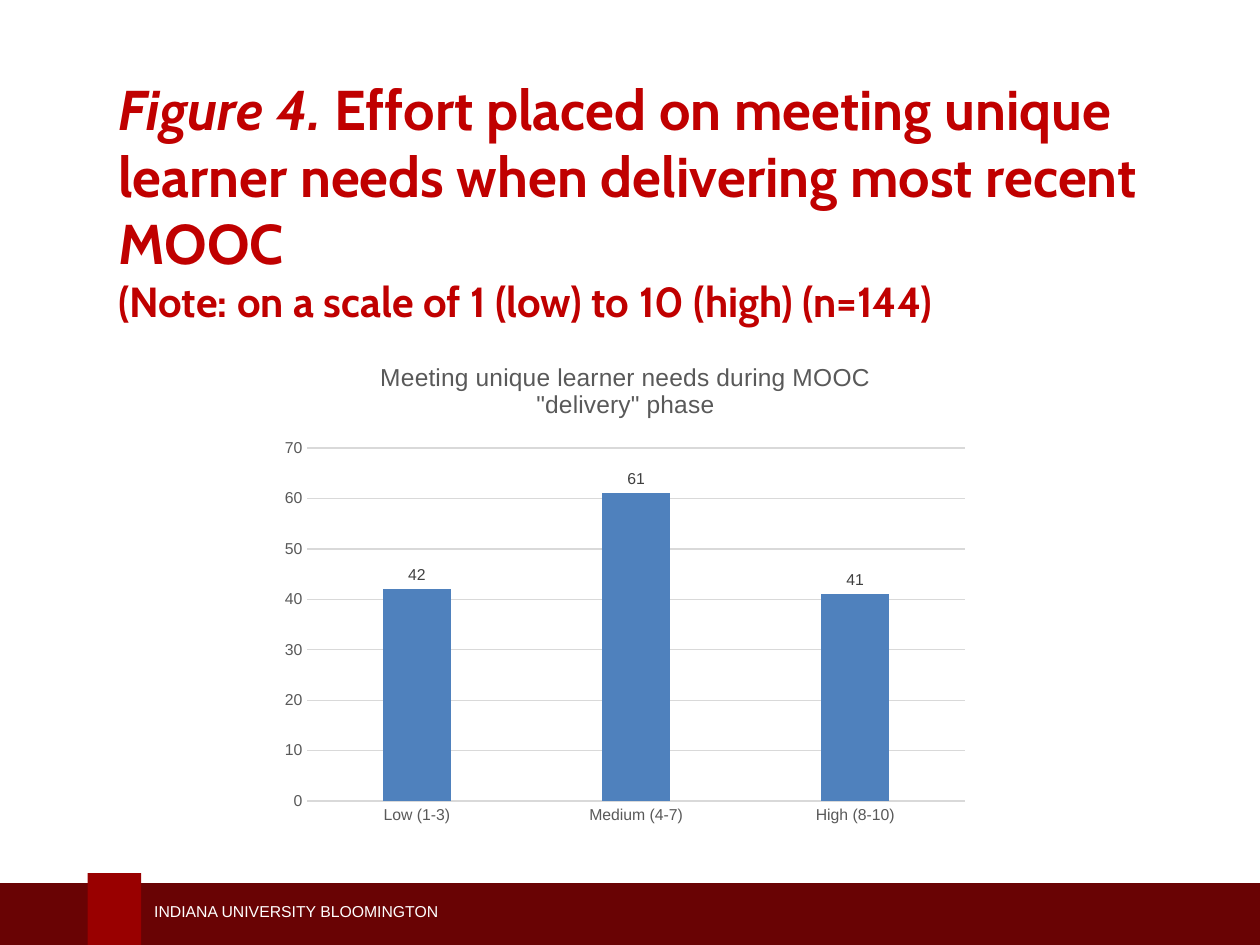
from lxml import etree
from pptx import Presentation
from pptx.chart.data import CategoryChartData
from pptx.dml.color import RGBColor
from pptx.enum.chart import XL_CHART_TYPE, XL_LABEL_POSITION, XL_TICK_MARK
from pptx.enum.shapes import MSO_SHAPE
from pptx.enum.text import MSO_ANCHOR
from pptx.oxml import parse_xml
from pptx.oxml.ns import nsdecls
from pptx.util import Inches, Pt

COLUMNS = XL_CHART_TYPE.COLUMN_CLUSTERED
ABOVE_BAR = XL_LABEL_POSITION.OUTSIDE_END
NO_TICK = XL_TICK_MARK.NONE
RECTANGLE = MSO_SHAPE.RECTANGLE
MIDDLE = MSO_ANCHOR.MIDDLE

deck = Presentation()
deck.slide_width, deck.slide_height = Inches(10), Inches(7.5)
slide = deck.slides.add_slide(deck.slide_layouts[6])


def place(left, top, width, height):
    """Turn percentages of the slide's width and height into lengths."""
    across, down = deck.slide_width / 100, deck.slide_height / 100
    return [int(left * across), int(top * down), int(width * across), int(height * down)]


def set_font(font, color, **values):
    font.color.rgb = RGBColor.from_string(color)
    for name, value in values.items():
        setattr(font, name, value)


# Footer
for area, color in [
    ((0, 93.45, 100, 6.55), "690304"),
    ((6.95, 92.4, 4.25, 7.6), "990000"),
]:
    band = slide.shapes.add_shape(RECTANGLE, *place(*area))
    band.shadow.inherit = False
    band.fill.solid()
    band.fill.fore_color.rgb = RGBColor.from_string(color)
    band.line.fill.background()

campus = slide.shapes.add_textbox(*place(11.25, 94.8, 39.5, 3.35)).text_frame
campus.word_wrap = True
campus.vertical_anchor = MIDDLE
campus_run = campus.paragraphs[0].add_run()
campus_run.text = "INDIANA UNIVERSITY BLOOMINGTON"
set_font(campus_run.font, "FFFFFF", name="Arial", size=Pt(9))

# Heading
heading = slide.shapes.add_textbox(*place(8.4, 8, 87.9, 26.4)).text_frame
heading.word_wrap = True
heading.vertical_anchor = MIDDLE
heading_line = heading.paragraphs[0]
for words, size, italic in [
    ("Figure 4.", 32, True),
    (" Effort placed on meeting unique learner needs when delivering most recent MOOC", 32, False),
    ("(Note: on a scale of 1 (low) to 10 (high) (n=144)", 24, False),
]:
    if size == 24:
        heading_line.add_line_break()
    run = heading_line.add_run()
    run.text = words
    set_font(run.font, "C00000", name="Cabin", size=Pt(size), bold=True, italic=italic)

# Chart of effort ratings
ratings = CategoryChartData()
ratings.categories = ["Low (1-3)", "Medium (4-7)", "High (8-10)"]
ratings.add_series("Series 1", [42, 61, 41])
chart = slide.shapes.add_chart(COLUMNS, *place(21.6, 36, 56.1, 51.9), ratings).chart
chart.has_legend = False
set_font(chart.font, "000000", name="Arial", size=Pt(10))

chart.has_title = True
chart_title = chart.chart_title.text_frame
chart_title.text = 'Meeting unique learner needs during MOOC "delivery" phase'
set_font(chart_title.paragraphs[0].runs[0].font, "595959", name="Arial", size=Pt(14), bold=False)
chart.chart_title.include_in_layout = False

plot = chart.plots[0]
plot.gap_width, plot.overlap, plot.vary_by_categories = 219, -27, False
bars = plot.series[0].format.fill
bars.solid()
bars.fore_color.rgb = RGBColor.from_string("4F81BD")
plot.has_data_labels = True
plot.data_labels.show_value = True
plot.data_labels.position = ABOVE_BAR
set_font(plot.data_labels.font, "404040", name="Arial", size=Pt(9))

rating_axis, count_axis = chart.category_axis, chart.value_axis
for axis in (rating_axis, count_axis):
    axis.major_tick_mark = axis.minor_tick_mark = NO_TICK
    set_font(axis.tick_labels.font, "595959", name="Arial", size=Pt(9))
count_axis.minimum_scale, count_axis.maximum_scale, count_axis.major_unit = 0, 70, 10
count_axis.format.line.fill.background()
for rule in (rating_axis.format.line, count_axis.major_gridlines.format.line):
    rule.color.rgb = RGBColor.from_string("D9D9D9")
    rule.width = Pt(0.75)

# Fix the plot area inside the chart, in shares of the chart's size
plot_area = plot_layout = chart.plots[0]._element.getparent()
for old_layout in plot_area.findall("{*}layout"):
    plot_area.remove(old_layout)
plot_layout = parse_xml(f"<c:layout {nsdecls('c')}><c:manualLayout/></c:layout>")
plot_area.insert(0, plot_layout)
chart_ns = etree.QName(plot_area).namespace
for tag, value in {
    "layoutTarget": "inner", "xMode": "edge", "yMode": "edge",
    "x": 0.05, "y": 0.22, "w": 0.93, "h": 0.72,
}.items():
    etree.SubElement(plot_layout[0], f"{{{chart_ns}}}{tag}").set("val", str(value))

deck.save("out.pptx")
